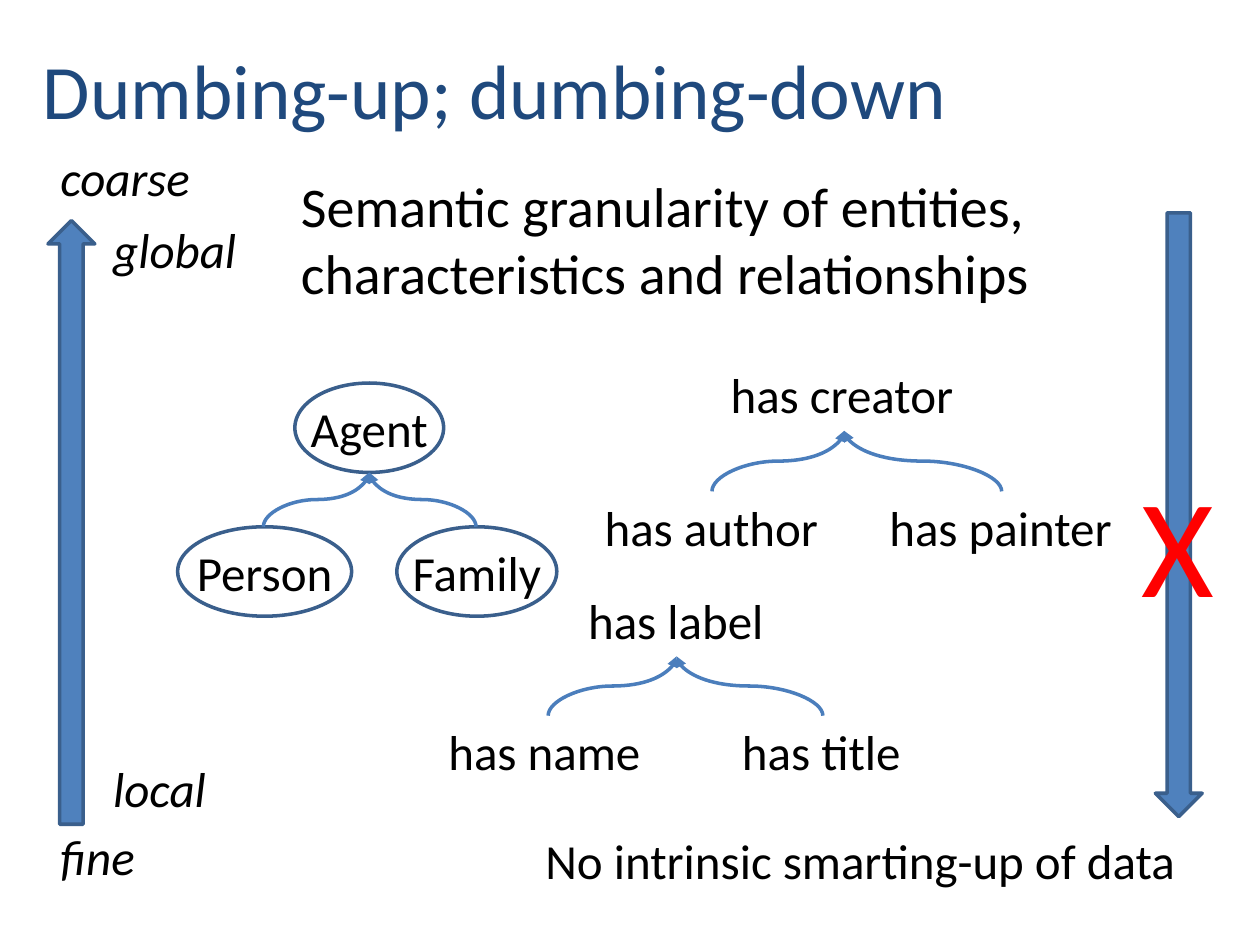
"""Build the slide on semantic granularity, with its dumbing-up trees and scale arrows."""
from pptx import Presentation
from pptx.dml.color import RGBColor
from pptx.enum.shapes import MSO_CONNECTOR, MSO_SHAPE
from pptx.enum.text import MSO_ANCHOR, PP_ALIGN
from pptx.oxml.ns import qn
from pptx.util import Pt
from lxml.etree import SubElement

COLORS = {"title": "1F497D", "text": "000000", "cross": "FF0000",
          "arrow": "4F81BD", "outline": "3A5F8C", "link": "4B7EBC"}


def write(frame, text, size=28, color="text", italic=False, wrap=False,
          align=PP_ALIGN.LEFT, anchor=MSO_ANCHOR.TOP):
    frame.word_wrap = wrap
    frame.vertical_anchor = anchor
    paragraph = frame.paragraphs[0]
    paragraph.alignment = align
    run = paragraph.add_run()
    run.text = text
    font_format = {"name": "Calibri", "size": Pt(size), "italic": italic}
    for attribute, value in font_format.items():
        setattr(run.font, attribute, value)
    run.font.color.rgb = RGBColor.from_string(COLORS[color])


def outline(shape, color):
    shape.line.color.rgb = RGBColor.from_string(COLORS[color])
    shape.line.width = Pt(2)


presentation = Presentation()
presentation.slide_width, presentation.slide_height = Pt(720), Pt(540)
slide = presentation.slides.add_slide(presentation.slide_layouts[5])
shapes = slide.shapes

title = shapes.title
title_place = {"left": 17.3, "top": 20.9, "width": 536.4, "height": 60.5}
for attribute, value in title_place.items():
    setattr(title, attribute, Pt(value))
write(title.text_frame, "Dumbing-up; dumbing-down", 44, "title")

scale_arrows = [(MSO_SHAPE.UP_ARROW, 27.4, 126), (MSO_SHAPE.DOWN_ARROW, 660.2, 121.7)]
for direction, left, top in scale_arrows:
    scale = shapes.add_shape(direction, Pt(left), Pt(top), Pt(26.8), Pt(345))
    scale.shadow.inherit = False
    scale.fill.solid()
    scale.fill.fore_color.rgb = RGBColor.from_string(COLORS["arrow"])
    outline(scale, "outline")

entities = [("Agent", 168.5, 218.9, 85), ("Person", 101.5, 301, 99.4),
            ("Family", 226.8, 301, 91.4)]
for name, left, top, width in entities:
    entity = shapes.add_shape(MSO_SHAPE.OVAL, Pt(left), Pt(top), Pt(width), Pt(51.1))
    entity.shadow.inherit = False
    entity.fill.background()
    outline(entity, "outline")
    write(entity.text_frame, name, align=PP_ALIGN.CENTER, anchor=MSO_ANCHOR.MIDDLE)

labels = [
    ("Semantic granularity of entities, characteristics and relationships",
     164.9, 94.3, 512.6, 85, {"size": 32, "wrap": True}),
    ("coarse", 27.4, 80.6, 89.3, 41, {"italic": True}),
    ("global", 57.6, 121.7, 85.7, 41, {"italic": True}),
    ("local", 57.6, 429.8, 67.7, 41, {"italic": True}),
    ("fine", 27.4, 468.7, 58.3, 41, {"italic": True}),
    ("has creator", 410.4, 204.5, 143.3, 41, {}),
    ("has author", 338.4, 280.8, 138.2, 41, {}),
    ("has painter", 501.1, 280.8, 143.3, 41, {}),
    ("has label", 329, 334.1, 115.9, 41, {}),
    ("has name", 249.1, 409, 128.9, 41, {}),
    ("has title", 416.9, 409, 106.6, 41, {}),
    ("No intrinsic smarting-up of data", 304.6, 470.9, 378.7, 41, {}),
    ("X", 645.1, 257.8, 56.2, 104.4, {"size": 80, "color": "cross"}),
]
for text, left, top, width, height, style in labels:
    label = shapes.add_textbox(Pt(left), Pt(top), Pt(width), Pt(height))
    write(label.text_frame, text, **style)

trees = [(211, 270, 301, (150.5, 272)),
         (386.6, 375.1, 409, (313.2, 470.2)),
         (482.4, 246.2, 280.8, (406.8, 572.4))]
for parent_x, parent_y, child_y, children in trees:
    for child_x in children:
        side = 1 if child_x < parent_x else -1
        center_x, center_y = (parent_x + child_x) / 2, (parent_y + child_y) / 2
        half_rise, half_run = (child_y - parent_y) / 2, abs(parent_x - child_x) / 2
        link = shapes.add_connector(
            MSO_CONNECTOR.CURVE,
            Pt(center_x + side * half_rise), Pt(center_y + half_run),
            Pt(center_x - side * half_rise), Pt(center_y - half_run))
        outline(link, "link")
        properties = link._element.spPr
        properties.find(qn("a:xfrm")).set("rot", str(side * 90 % 360 * 60000))
        SubElement(properties.find(qn("a:ln")), qn("a:tailEnd")).set("type", "triangle")
        SubElement(properties, qn("a:effectLst"))

presentation.save("out.pptx")
